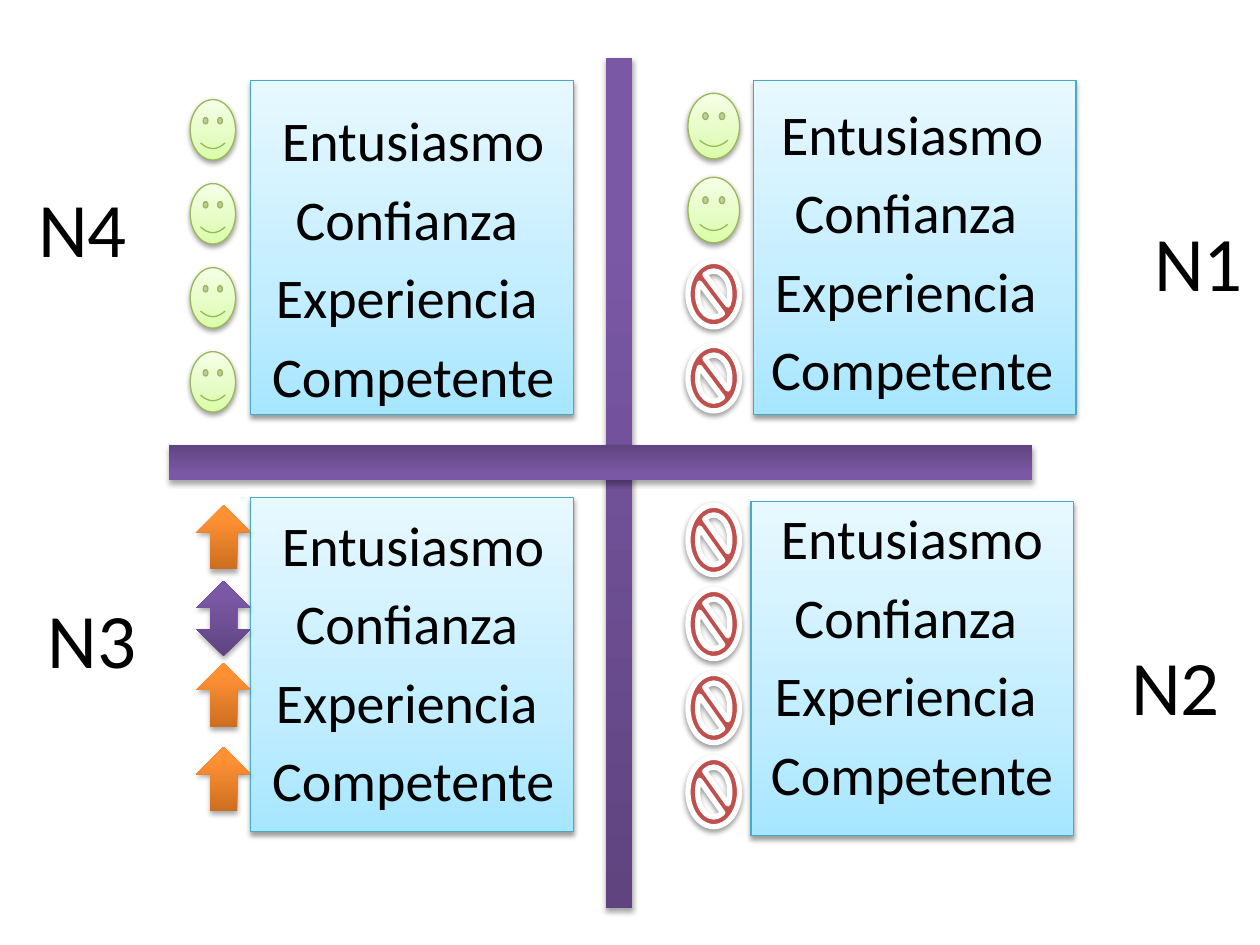
import copy

import lxml.etree
import pptx
import pptx.dml.color
import pptx.enum.shapes
import pptx.enum.text
import pptx.oxml.ns
import pptx.util

RGB = pptx.dml.color.RGBColor
SHAPE = pptx.enum.shapes.MSO_SHAPE
ANCHOR = pptx.enum.text.MSO_ANCHOR
qn = pptx.oxml.ns.qn

BLACK = RGB(0x00, 0x00, 0x00)
WHITE = RGB(0xFF, 0xFF, 0xFF)
RED = RGB(0xC0, 0x50, 0x4D)
BLUE_LINE = RGB(0x46, 0xAA, 0xC5)
GREEN_LINE = RGB(0x98, 0xB9, 0x55)
BLUE = (RGB(0xA7, 0xE6, 0xFF), RGB(0xC1, 0xED, 0xFF), RGB(0xE7, 0xF8, 0xFF))
GREEN = (RGB(0xDA, 0xFD, 0xA7), RGB(0xE4, 0xFC, 0xC2), RGB(0xF5, 0xFF, 0xE7))
PURPLE = (RGB(0x5F, 0x44, 0x80), RGB(0x7B, 0x58, 0xA6), RGB(0x7C, 0x57, 0xA8))
ORANGE = (RGB(0xCC, 0x6E, 0x20), RGB(0xFF, 0x90, 0x34), RGB(0xFF, 0x91, 0x36))

COLUMNS, ROWS = 100, 75
ICON_PITCH = 6.67
PANEL_SIZE = (25.6, 26.5)
QUALITIES = ("Entusiasmo", "Confianza ", "Experiencia ", "Competente")

LOOKS = {
    "panel": (SHAPE.RECTANGLE, BLUE, BLUE_LINE, 0.75),
    "bar": (SHAPE.RECTANGLE, PURPLE, None, 0),
    "smile": (SHAPE.SMILEY_FACE, GREEN, GREEN_LINE, 0.75),
    "banned": (SHAPE.NO_SYMBOL, RED, WHITE, 3),
    "up": (SHAPE.UP_ARROW, ORANGE, None, 0),
    "up_down": (SHAPE.UP_DOWN_ARROW, PURPLE, None, 0),
}


class Board:
    font = "Calibri"

    def __init__(self, deck):
        self.slide = deck.slides.add_slide(deck.slide_layouts[6])
        self.column = deck.slide_width / COLUMNS
        self.row = deck.slide_height / ROWS

    def place(self, left, top, width, height):
        return (round(left * self.column), round(top * self.row),
                round(width * self.column), round(height * self.row))

    def figure(self, look, cell, angle=90):
        preset, colour, line, weight = LOOKS[look]
        figure = self.slide.shapes.add_shape(preset, *self.place(*cell))
        if isinstance(colour, RGB):
            figure.fill.solid()
            figure.fill.fore_color.rgb = colour
        else:
            self.gradient(figure, colour, 0.35 if line else 0.8, angle)
        if line:
            figure.line.color.rgb = line
            figure.line.width = pptx.util.Pt(weight)
        else:
            figure.line.fill.background()
        self.shadow(figure, 38 if line else 35, 1.6 if line else 1.8)

    def gradient(self, figure, colours, middle, angle):
        figure.fill.gradient()
        figure.fill.gradient_angle = angle
        stops = figure.element.spPr.find(".//" + qn("a:gsLst"))
        stops.append(copy.deepcopy(stops[0]))
        for stop, colour, position in zip(figure.fill.gradient_stops, colours, (0, middle, 1)):
            stop.color.rgb = colour
            stop.position = position

    def shadow(self, figure, opacity, distance):
        figure.shadow.inherit = False
        effects = figure.element.spPr.find(qn("a:effectLst"))
        outer = lxml.etree.SubElement(
            effects, qn("a:outerShdw"), blurRad=str(pptx.util.Pt(3.1)),
            dist=str(pptx.util.Pt(distance)), dir="5400000", rotWithShape="0")
        colour = lxml.etree.SubElement(outer, qn("a:srgbClr"), val=str(BLACK))
        lxml.etree.SubElement(colour, qn("a:alpha"), val=str(opacity * 1000))

    def text(self, lines, cell, size, anchor=ANCHOR.TOP, before=0):
        frame = self.slide.shapes.add_textbox(*self.place(*cell)).text_frame
        frame.word_wrap = True
        frame.vertical_anchor = anchor
        frame.text = "\n".join(lines)
        for paragraph in frame.paragraphs:
            paragraph.alignment = pptx.enum.text.PP_ALIGN.CENTER
            paragraph.space_before = pptx.util.Pt(before)
            paragraph.font.name = self.font
            paragraph.font.size = pptx.util.Pt(size)
            paragraph.font.color.rgb = BLACK

    def quadrant(self, label, label_cell, panel_corner, list_cell, icon_left, icon_width, icons):
        self.figure("panel", panel_corner + PANEL_SIZE)
        self.text(QUALITIES, list_cell, 32, before=6.4)
        self.text([label], label_cell, 44, ANCHOR.MIDDLE)
        for look, top, height in icons:
            self.figure(look, (icon_left, top, icon_width, height))


def column_of(looks, top, height):
    return [(look, top + i * ICON_PITCH, height) for i, look in enumerate(looks)]


def main():
    deck = pptx.Presentation()
    deck.slide_width = pptx.util.Inches(10)
    deck.slide_height = pptx.util.Inches(7.5)
    board = Board(deck)
    board.quadrant(" N1", (87.6, 15.1, 13.7, 11.2), (59.8, 6.4), (59, 7.4, 26.8, 24.1),
                   54.6, 4.1, column_of(["smile"] * 2 + ["banned"] * 2, 7.4, 5.2))
    board.quadrant("N2", (87.7, 48.4, 11.2, 11.8), (59.6, 39.8), (59.1, 39.5, 26.6, 26.5),
                   54.6, 4.1, column_of(["banned"] * 4, 40.1, 5.5))
    board.figure("bar", (48.1, 4.6, 2.1, 67.5))
    board.figure("bar", (13.4, 35.3, 68.5, 2.8), angle=270)
    board.quadrant("N3", (1.7, 45.1, 11.2, 11.1), (19.9, 39.5), (19.5, 40, 26.6, 27.8),
                   15.6, 4.3, [("up", 40.1, 5.1), ("up_down", 46.1, 6),
                               ("up", 52.6, 5.1), ("up", 59.3, 5.1)])
    board.quadrant("N4", (1.7, 12.9, 9.7, 10.2), (19.9, 6.4), (19.5, 7.9, 26.6, 27.8),
                   15.1, 3.6, column_of(["smile"] * 4, 7.9, 4.8))
    deck.save("out.pptx")


if __name__ == "__main__":
    main()
